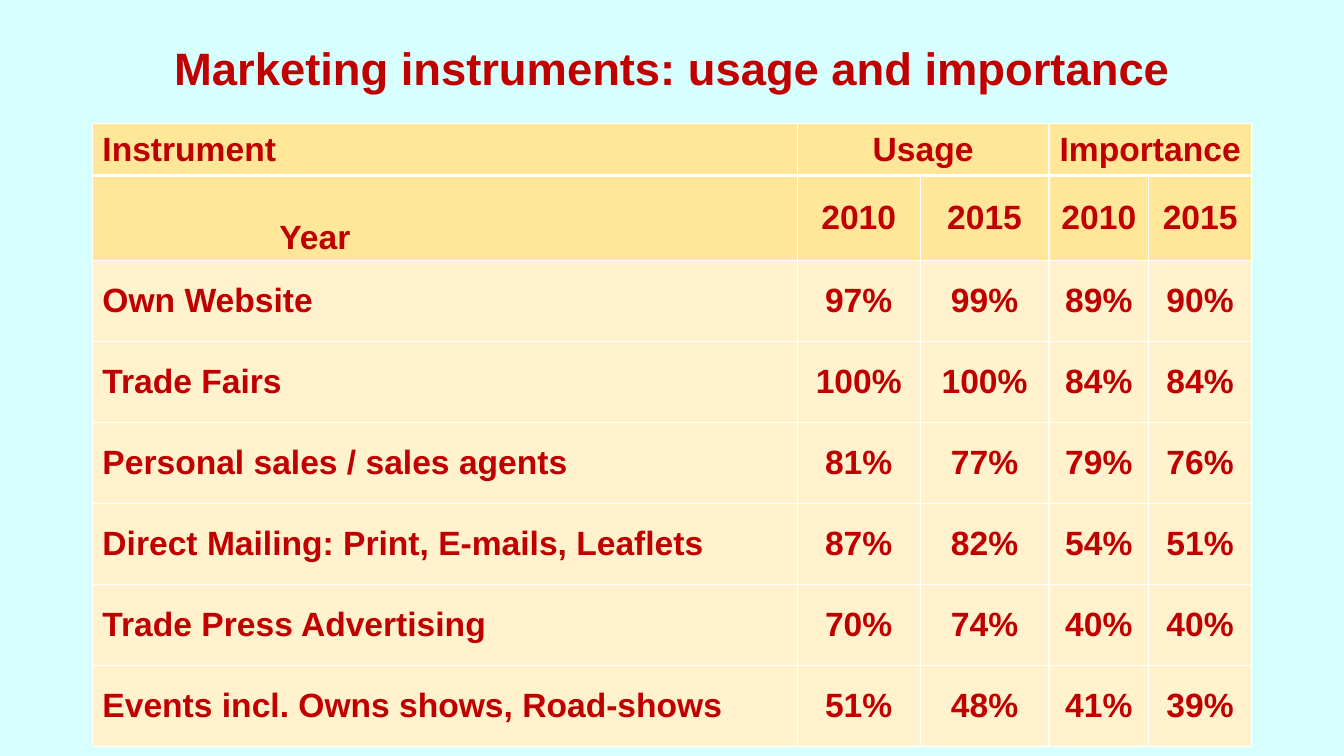
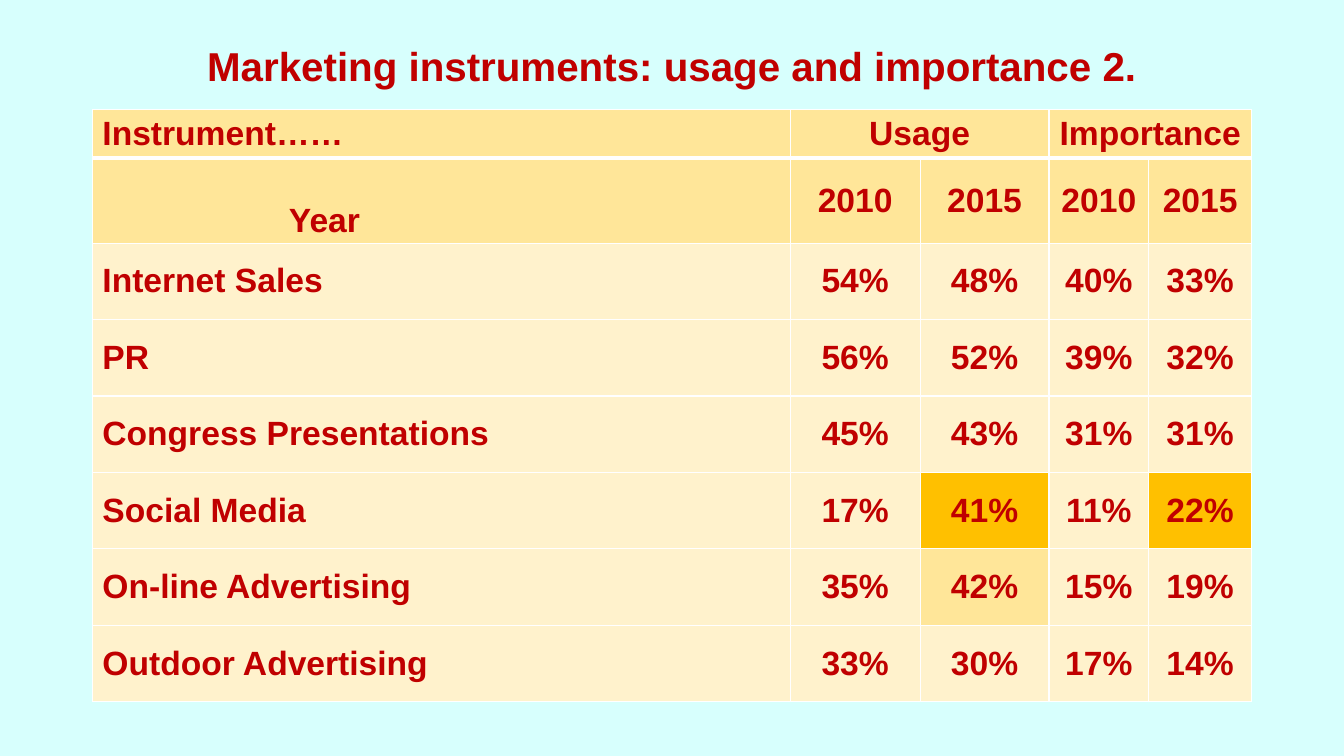
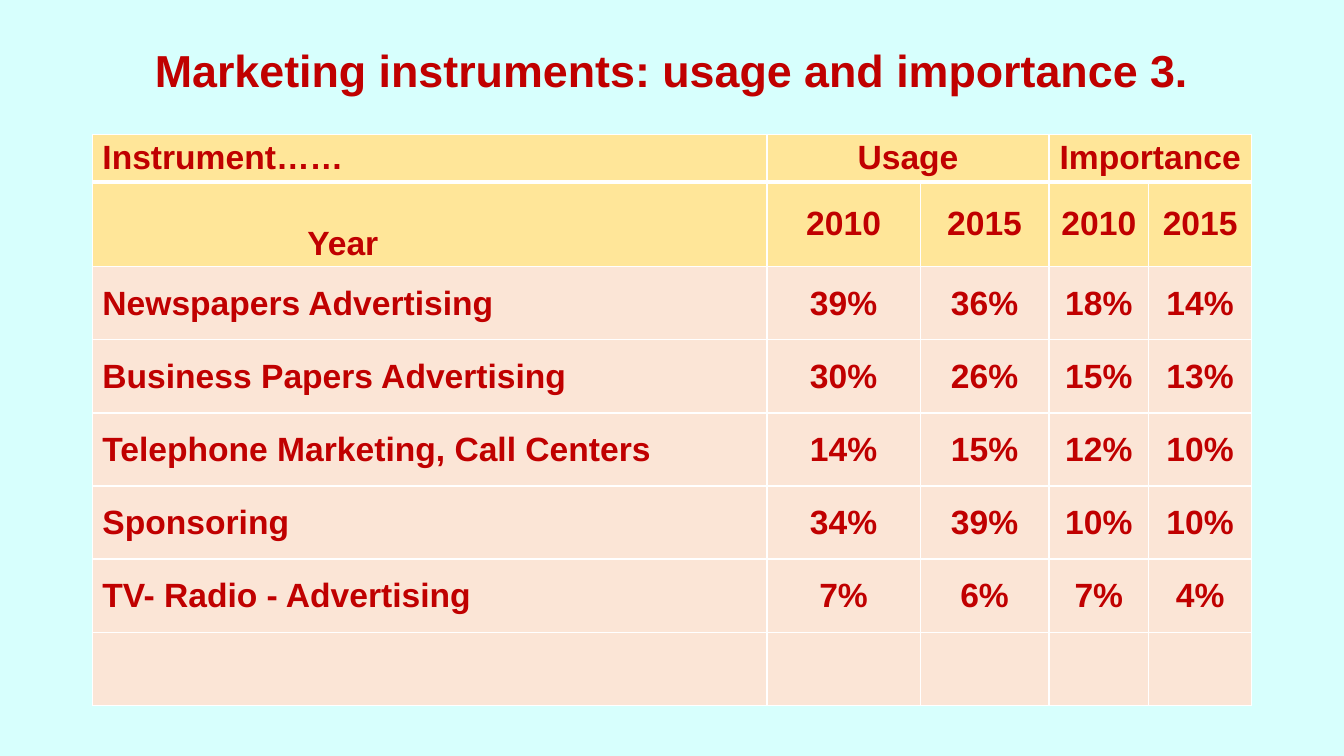
from lxml.etree import SubElement
from pptx import Presentation
from pptx.dml.color import RGBColor as RGB
from pptx.enum.text import MSO_ANCHOR as ANCHOR, PP_ALIGN as ALIGN
from pptx.oxml.ns import qn
from pptx.util import Pt

COLORS = {"bg": "D7FFFD", "text": "C00000", "line": "FFFFFF", "head": "FFE699",
          "cream": "FFF2CC", "peach": "FBE5D6", "gold": "FFC000"}
FONT = "Arial"
LEFT, WIDTH = 66, 828
YEAR_ROW = 60.8
LAST_COLS = [92, 71.3, 73.4]
YEARS = ["2010", "2015", "2010", "2015"]


def color(name):
    return RGB.from_string(COLORS[name])


class Deck:
    def __init__(self):
        self.prs = Presentation()
        self.prs.slide_width, self.prs.slide_height = Pt(960), Pt(540)
        fill = self.prs.slide_master.background.fill
        fill.solid()
        fill.fore_color.rgb = color("bg")
        self.slide = None

    def add_slide(self):
        self.slide = self.prs.slides.add_slide(self.prs.slide_layouts[5])

    def style(self, p, size, align):
        p.alignment = align
        for r in p.runs:
            r.font.name, r.font.size, r.font.bold = FONT, Pt(size), True
            r.font.color.rgb = color("text")

    def title(self, text, size, height):
        sp = self.slide.shapes.title
        sp.left, sp.top, sp.width, sp.height = Pt(LEFT), Pt(28.8), Pt(WIDTH), Pt(height)
        tf = sp.text_frame
        tf.text = text
        tf.vertical_anchor = ANCHOR.MIDDLE
        p = tf.paragraphs[0]
        p.line_spacing = 0.9
        self.style(p, size, ALIGN.CENTER)

    def borders(self, cell, top, bottom):
        tc_pr = cell._tc.get_or_add_tcPr()
        for side, width in zip("LRTB", (1, 1, top, bottom)):
            ln = SubElement(tc_pr, qn(f"a:ln{side}"), w=str(Pt(width)))
            SubElement(SubElement(ln, qn("a:solidFill")), qn("a:srgbClr"), val=COLORS["line"])

    def cell(self, cell, text, fill, align, top=1, bottom=1):
        cell.margin_top = cell.margin_bottom = Pt(2.8)
        cell.vertical_anchor = ANCHOR.MIDDLE
        self.borders(cell, top, bottom)
        cell.fill.solid()
        cell.fill.fore_color.rgb = color(fill)
        cell.text = text
        self.style(cell.text_frame.paragraphs[0], 24, align)

    def table(self, top, head, body, usage_col, year_indent, label, rows, fill, marks):
        cols = [WIDTH - usage_col - sum(LAST_COLS), usage_col] + LAST_COLS
        heights = [head, YEAR_ROW] + [body] * len(rows)
        data = [[label, "Usage", "", "Importance", ""], ["Year"] + YEARS] + rows
        tbl = self.slide.shapes.add_table(len(data), len(cols), Pt(LEFT), Pt(top),
                                          Pt(WIDTH), Pt(sum(heights))).table
        tbl.first_row = tbl.horz_banding = False
        for col, width in zip(tbl.columns, cols):
            col.width = Pt(width)
        for row, height in zip(tbl.rows, heights):
            row.height = Pt(height)
        for i, row in enumerate(data):
            for j, text in enumerate(row):
                shade = "head" if i < 2 else marks.get((row[0], j), fill)
                self.cell(tbl.cell(i, j), text, shade, ALIGN.CENTER if j else ALIGN.LEFT,
                          top=3 if i == 1 else 1, bottom=3 if i == 0 else 1)
        for j in (1, 3):
            tbl.cell(0, j).merge(tbl.cell(0, j + 1))
        # The year label sits low and indented in its cell
        year = tbl.cell(1, 0)
        year.vertical_anchor = ANCHOR.BOTTOM
        year.margin_left = Pt(year_indent)


SLIDES = [
    # Most used instruments
    dict(title=("Marketing instruments: usage and importance", 32.4, 43),
         table=dict(top=88.5, head=36.9, body=57.9, usage_col=87.8, year_indent=133.6,
                    label="Instrument", fill="cream", marks={}, rows=[
                        ["Own Website", "97%", "99%", "89%", "90%"],
                        ["Trade Fairs", "100%", "100%", "84%", "84%"],
                        ["Personal sales / sales agents", "81%", "77%", "79%", "76%"],
                        ["Direct Mailing: Print, E-mails, Leaflets", "87%", "82%", "54%", "51%"],
                        ["Trade Press Advertising", "70%", "74%", "40%", "40%"],
                        ["Events incl. Owns shows, Road-shows", "51%", "48%", "41%", "39%"]])),
    # Middle group, with the growing instruments marked
    dict(title=("Marketing instruments: usage and importance 2.", 28.8, 40),
         table=dict(top=78.5, head=34.4, body=54.6, usage_col=92.9, year_indent=140.4,
                    label="Instrument……", fill="cream",
                    marks={("Social Media", 2): "gold", ("Social Media", 4): "gold",
                           ("On-line Advertising", 2): "head"}, rows=[
                        ["Internet Sales", "54%", "48%", "40%", "33%"],
                        ["PR", "56%", "52%", "39%", "32%"],
                        ["Congress Presentations", "45%", "43%", "31%", "31%"],
                        ["Social Media", "17%", "41%", "11%", "22%"],
                        ["On-line Advertising", "35%", "42%", "15%", "19%"],
                        ["Outdoor Advertising", "33%", "30%", "17%", "14%"]])),
    # Least important instruments
    dict(title=("Marketing instruments: usage and importance 3.", 32, 47),
         table=dict(top=95.8, head=34, body=52.2, usage_col=109.4, year_indent=153.5,
                    label="Instrument……", fill="peach", marks={}, rows=[
                        ["Newspapers Advertising", "39%", "36%", "18%", "14%"],
                        ["Business Papers Advertising", "30%", "26%", "15%", "13%"],
                        ["Telephone Marketing, Call Centers", "14%", "15%", "12%", "10%"],
                        ["Sponsoring", "34%", "39%", "10%", "10%"],
                        ["TV- Radio - Advertising", "7%", "6%", "7%", "4%"],
                        [""] * 5])),
]


def main():
    deck = Deck()
    for content in SLIDES:
        deck.add_slide()
        deck.title(*content["title"])
        deck.table(**content["table"])
    deck.prs.save("out.pptx")


if __name__ == "__main__":
    main()
